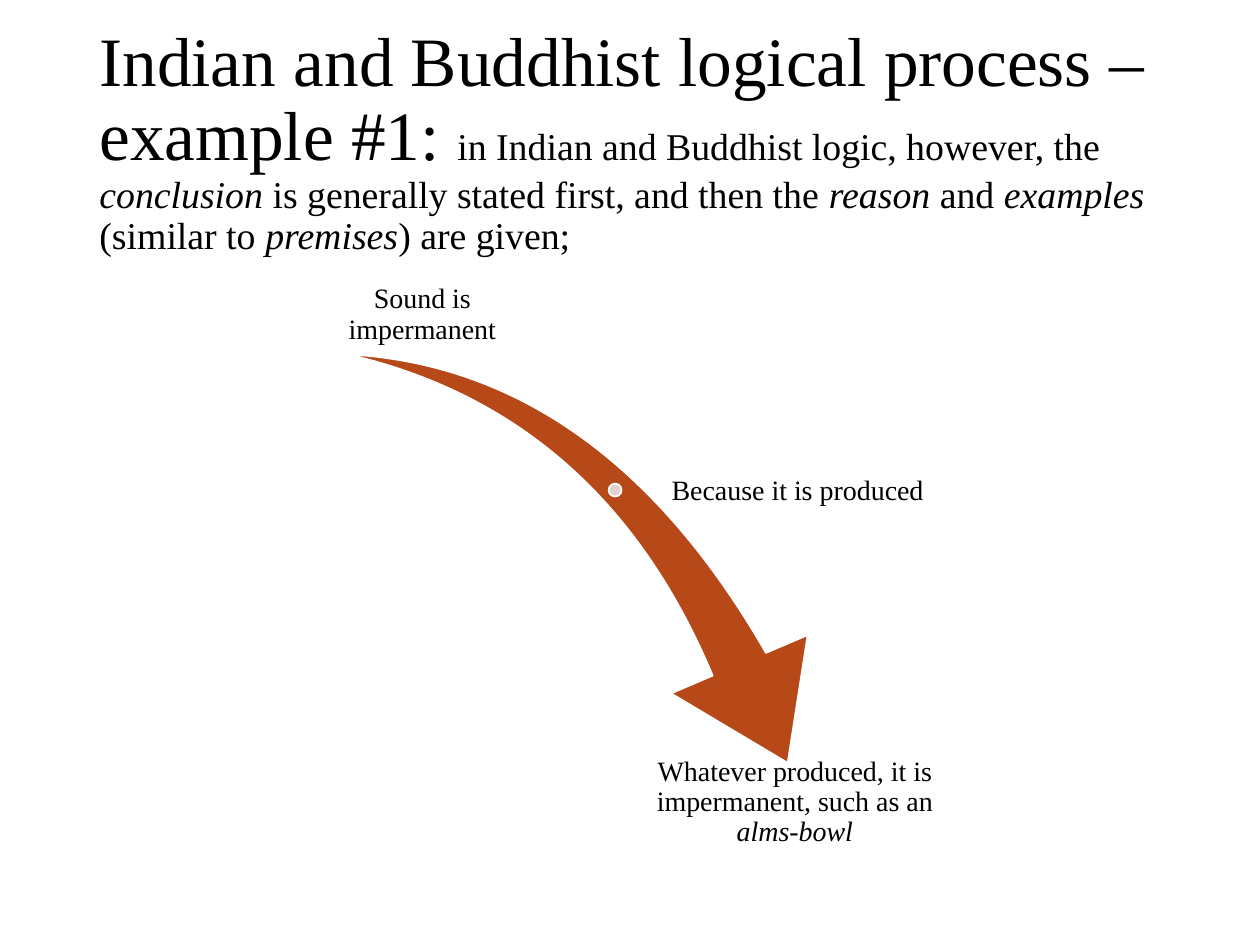
from pptx import Presentation
from pptx.dml.color import RGBColor
from pptx.enum.shapes import MSO_SHAPE
from pptx.enum.text import MSO_ANCHOR, MSO_AUTO_SIZE, PP_ALIGN
from pptx.util import Cm, Pt

BLACK = RGBColor(0x00, 0x00, 0x00)
WHITE = RGBColor(0xFF, 0xFF, 0xFF)
RUST = RGBColor(0xB7, 0x49, 0x19)
PALE_ROSE = RGBColor(0xE6, 0xD0, 0xCC)
FONT = "Times New Roman"

HEADING = "Indian and Buddhist logical process – example #1: "
EXPLANATION = [
    ("in Indian and Buddhist logic, however, the ", False),
    ("conclusion", True),
    (" is generally stated first, and then the ", False),
    ("reason", True),
    (" and ", False),
    ("examples", True),
    (" (similar to ", False),
    ("premises", True),
    (") are given;", False),
]
STATEMENTS = [
    ((6.05, 5.08, 4.93, 1.93), MSO_ANCHOR.BOTTOM, PP_ALIGN.CENTER,
     [("Sound is impermanent", False)]),
    ((13.49, 8.94, 5.84, 1.93), MSO_ANCHOR.MIDDLE, PP_ALIGN.LEFT,
     [("Because it is produced", False)]),
    ((12.7, 15.21, 6.65, 1.93), MSO_ANCHOR.TOP, PP_ALIGN.CENTER,
     [("Whatever produced, it is impermanent, such as an ", False),
      ("alms-bowl", True)]),
]


def add_runs(paragraph, parts, size):
    """Append (text, italic) parts to a paragraph at one size."""
    for text, italic in parts:
        run = paragraph.add_run()
        run.text = text
        run.font.name = FONT
        run.font.size = Pt(size)
        run.font.italic = italic
        run.font.color.rgb = BLACK


def fill_title(title):
    """Place the title and write its heading and explanation."""
    title.left, title.top, title.width, title.height = map(Cm, (1.75, 1.02, 21.89, 3.68))
    frame = title.text_frame
    frame.word_wrap = True
    frame.auto_size = MSO_AUTO_SIZE.NONE
    frame.vertical_anchor = MSO_ANCHOR.MIDDLE
    paragraph = frame.paragraphs[0]
    paragraph.alignment = PP_ALIGN.LEFT
    paragraph.line_spacing = 0.9
    add_runs(paragraph, [(HEADING, False)], 39.6)
    add_runs(paragraph, EXPLANATION, 21.6)


def add_figure(slide, preset, box, color):
    """Add a filled preset shape with a thin white outline."""
    figure = slide.shapes.add_shape(preset, *map(Cm, box))
    figure.shadow.inherit = False
    figure.fill.solid()
    figure.fill.fore_color.rgb = color
    figure.line.color.rgb = WHITE
    figure.line.width = Pt(1)
    return figure


def add_statement(slide, box, anchor, alignment, parts):
    """Add one step of the argument as a text box."""
    frame = slide.shapes.add_textbox(*map(Cm, box)).text_frame
    frame.word_wrap = True
    frame.vertical_anchor = anchor
    frame.margin_left = frame.margin_right = Cm(0.05)
    frame.margin_top = frame.margin_bottom = Cm(0.05)
    paragraph = frame.paragraphs[0]
    paragraph.alignment = alignment
    paragraph.line_spacing = 0.9
    add_runs(paragraph, parts, 16)


def main():
    """Build and save the slide."""
    presentation = Presentation()
    presentation.slide_width = Cm(25.4)
    presentation.slide_height = Cm(19.05)
    slide = presentation.slides.add_slide(presentation.slide_layouts[5])
    fill_title(slide.shapes.title)

    argument_arrow = add_figure(
        slide, MSO_SHAPE.SWOOSH_ARROW, (6.76, 7.47, 10.44, 7.26), RUST)
    argument_arrow.rotation = 73.3
    argument_arrow.adjustments[0] = 0.16
    argument_arrow.adjustments[1] = 0.31
    add_figure(slide, MSO_SHAPE.OVAL, (12.27, 9.75, 0.26, 0.26), PALE_ROSE)

    for statement in STATEMENTS:
        add_statement(slide, *statement)
    presentation.save("out.pptx")


if __name__ == "__main__":
    main()
